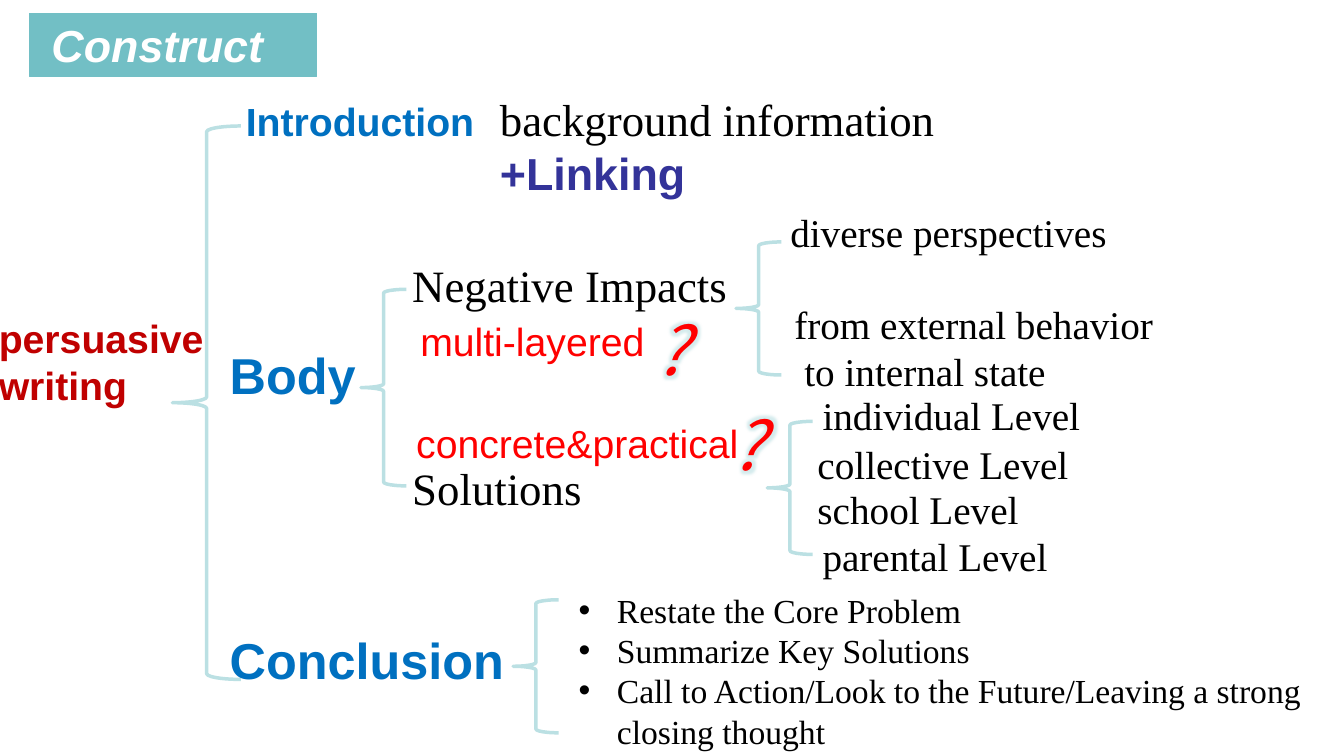
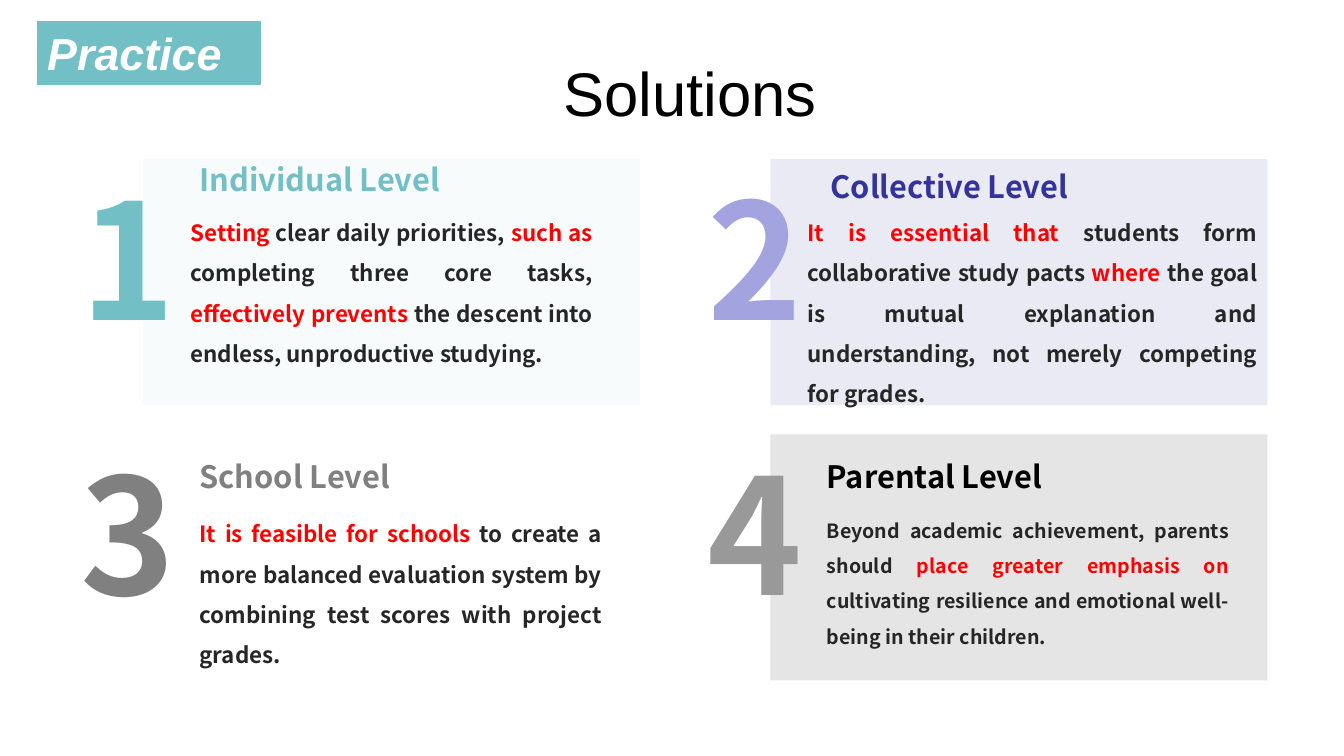
from lxml import etree
from pptx import Presentation, util as u
from pptx.dml.color import RGBColor
from pptx.enum import shapes, text
from pptx.oxml.ns import qn

HUES = {
    "teal": "72BFC5", "pale": "BBE0E3", "blue": "0070C0", "navy": "333399",
    "lilac": "A3A3E0", "brick": "C00000", "red": "FF0000", "ink": "262626",
    "gray": "808080", "ash": "999999", "black": "000000", "white": "FFFFFF",
}
SANS, SERIF = "Arial", "Times New Roman"
NOTO, MARK = "Noto Sans CJK SC", "Noto Sans CJK JP"
KIND = shapes.MSO_SHAPE
ALIGN = text.PP_ALIGN


def hue(name):
    return RGBColor.from_string(HUES[name])


def inch(*sizes):
    return [u.Inches(size) for size in sizes]


def node(parent, tag, **attrs):
    item = etree.SubElement(parent, qn(tag))
    for key, value in attrs.items():
        item.set(key, str(value))
    return item


# Text
def style(run, size=28, font=SANS, color="black", bold=False, italic=False,
          fade=None, glow=None):
    face = run.font
    if fade:
        face.fill.gradient()
        face.fill.gradient_angle = 315
        for stop, name, place in zip(face.fill.gradient_stops, (color, fade), (0, 0.72)):
            stop.color.rgb = hue(name)
            stop.position = place
    else:
        face.color.rgb = hue(color)
    if glow:
        halo = node(node(run._r.get_or_add_rPr(), "a:effectLst"), "a:glow",
                    rad=u.Pt(8))
        tint = node(halo, "a:srgbClr", val=HUES[glow])
        node(tint, "a:alpha", val=60000)
    face.size, face.name = u.Pt(size), font
    face.bold, face.italic = bold, italic


def write(frame, paras, align=ALIGN.LEFT, space=None, bullet=False, **fmt):
    """Each paragraph is a string or a list of (string, run format) pairs."""
    if isinstance(paras, str):
        paras = [paras]
    for i, runs in enumerate(paras):
        para = frame.paragraphs[0] if i == 0 else frame.add_paragraph()
        para.alignment = align
        if space:
            para.line_spacing = space
        if bullet:
            props = para._p.get_or_add_pPr()
            props.set("marL", str(u.Inches(0.38)))
            props.set("indent", str(u.Inches(-0.38)))
            node(props, "a:buFont", typeface=SANS)
            node(props, "a:buChar", char="•")
        for words, extra in [(runs, {})] if isinstance(runs, str) else runs:
            run = para.add_run()
            run.text = words
            style(run, **{**fmt, **extra})


def label(slide, at, paras, middle=False, flush=False, wrap=True, **fmt):
    frame = slide.shapes.add_textbox(*inch(*at)).text_frame
    frame.word_wrap = wrap
    if middle:
        frame.vertical_anchor = text.MSO_ANCHOR.MIDDLE
    if flush:
        frame.margin_left = frame.margin_right = 0
        frame.margin_top = frame.margin_bottom = 0
    write(frame, paras, **fmt)
    return frame


# Shapes
def shape(slide, kind, at, fill=None, line=None, width=0.75):
    item = slide.shapes.add_shape(kind, *inch(*at))
    item.shadow.inherit = False
    if fill:
        item.fill.solid()
        item.fill.fore_color.rgb = hue(fill)
    else:
        item.fill.background()
    if line:
        item.line.color.rgb = hue(line)
        item.line.width = u.Pt(width)
    else:
        item.line.fill.background()
    return item


def banner(slide, at, words, inset=0.1):
    frame = shape(slide, KIND.RECTANGLE, at, "teal", "teal").text_frame
    frame.margin_left = u.Inches(inset)
    frame.vertical_anchor = text.MSO_ANCHOR.TOP
    write(frame, words, size=32, color="white", bold=True, italic=True)


def brace(slide, *at):
    shape(slide, KIND.LEFT_BRACE, at, line="pale", width=2.5)


def card(slide, x, y, tint, num, shade, head, drop, name, body, words):
    # Panel
    panel = shape(slide, KIND.ROUNDED_RECTANGLE, (x, y, 4.93, 2.44), tint)
    panel.adjustments[0] = 0
    solid = panel.fill._xPr.find(qn("a:solidFill"))
    node(solid[0], "a:alpha", val=10000)
    # Body, heading and number
    left, top, width, size = body
    label(slide, (x + left, y + top, width, 1.52), [words], flush=True,
          align=ALIGN.JUSTIFY, space=1.5, size=size, font=NOTO,
          color="ink", bold=True)
    label(slide, (x + drop[0], y + drop[1], 3.99, 0.62), name, middle=True,
          flush=True, size=22, font=NOTO, color=head, bold=True)
    label(slide, (x - 0.66, y, 1.01, 1.8), num, flush=True, wrap=False,
          align=ALIGN.CENTER, size=115, font=NOTO, bold=True, **shade)


# Slides
def outline(slide):
    banner(slide, (0.29, 0.13, 2.85, 0.63), "Construct", inset=0.22)

    # Trunk
    label(slide, (-0.11, 3.07, 2.57, 1.11), ["persuasive", "writing"],
          color="brick", bold=True)
    brace(slide, 1.71, 1.25, 0.68, 5.49)
    for at, words, size in [
        ((2.34, 0.92, 2.79, 0.6), "Introduction", 28),
        ((2.18, 3.36, 1.6, 0.59), "Body", 36),
        ((2.18, 6.19, 3.04, 0.58), "Conclusion", 36),
    ]:
        label(slide, at, words, size=size, color="blue", bold=True)

    # Introduction
    label(slide, (4.86, 0.86, 7.99, 1.18),
          ["background information",
           [("+Linking", dict(font=SANS, color="navy", bold=True))]],
          size=32, font=SERIF)

    # Body
    brace(slide, 3.58, 2.87, 0.45, 1.95)
    for at, words in [
        ((3.99, 2.51, 3.46, 0.56), "Negative Impacts"),
        ((3.99, 4.52, 5.56, 0.37), "Solutions"),
    ]:
        label(slide, at, words, size=32, font=SERIF)
    for at, words in [
        ((4.07, 3.1, 2.44, 0.57), "multi-layered"),
        ((4.03, 4.11, 6.67, 0.57), "concrete&practical"),
    ]:
        label(slide, at, words, color="red")
    for x, y in [(6.4, 3.01), (7.16, 3.95)]:
        label(slide, (x, y, 0.72, 0.91), "?", size=48, font=MARK,
              color="red", italic=True, glow="pale")

    # Leaves
    for x, y in [(7.3, 2.4), (7.61, 4.18), (5.09, 5.95)]:
        brace(slide, x, y, 0.45, 1.32)
    for x, y, words in [
        (7.74, 2.02, "diverse perspectives"),
        (8.06, 3.83, "individual Level"),
        (8.01, 4.32, "collective Level"),
        (8.01, 4.77, "school Level"),
        (8.06, 5.23, "parental Level"),
    ]:
        label(slide, (x, y, 5.56, 0.36), words, font=SERIF)
    frame = label(slide, (7.78, 2.93, 5.56, 0.64),
                  ["from external behavior", "to internal state"], font=SERIF)
    frame.paragraphs[1]._p.get_or_add_pPr().set("marL", str(u.Inches(0.1)))

    # Conclusion
    label(slide, (5.64, 5.8, 7.72, 1.51),
          ["Restate the Core Problem", "Summarize Key Solutions",
           "Call to Action/Look to the Future/Leaving a strong closing thought"],
          bullet=True, size=24, font=SERIF)


def levels(slide):
    label(slide, (5.49, 0.29, 3.04, 1.25), "Solutions", middle=True, size=44)
    banner(slide, (0.37, 0.21, 2.21, 0.63), "Practice")

    red = dict(color="red")
    cards = [
        ("pale", "1", dict(color="teal"), "teal", (0.56, -0.11),
         "Individual Level", (0.47, 0.46, 3.99, 16),
         [("Setting", red), (" clear daily priorities, ", {}), ("such as", red),
          (" completing three core tasks, ", {}), ("effectively prevents", red),
          (" the descent into endless, unproductive studying.", {})]),
        ("navy", "2", dict(color="lilac", fade="navy"), "navy", (0.6, -0.04),
         "Collective Level", (0.37, 0.46, 4.46, 16),
         [("It is essential that", red),
          (" students form collaborative study pacts ", {}), ("where ", red),
          ("the goal is mutual explanation and understanding, "
           "not merely competing for grades.", {})]),
        ("white", "3", dict(color="gray"), "gray", (0.56, 0.1),
         "School Level", (0.56, 0.72, 3.99, 16),
         [("It is feasible for schools ", red),
          ("to create a more balanced evaluation system by "
           "combining test scores with project grades.", {})]),
        ("black", "4", dict(color="ash", fade="black"), "black", (0.56, 0.1),
         "Parental Level", (0.56, 0.72, 3.99, 14),
         [("Beyond academic achievement, parents should ", {}),
          ("place greater emphasis on ", red),
          ("cultivating resilience and emotional well-being "
           "in their children.", {})]),
    ]
    for i, (tint, num, shade, head, drop, name, body, words) in enumerate(cards):
        row, col = divmod(i, 2)
        card(slide, 1.42 + 6.22 * col, 1.58 + 2.73 * row, tint, num, shade,
             head, drop, name, body, words)


def main():
    deck = Presentation()
    deck.slide_width, deck.slide_height = inch(13.33, 7.5)
    for build in (outline, levels):
        build(deck.slides.add_slide(deck.slide_layouts[6]))
    deck.save("out.pptx")


if __name__ == "__main__":
    main()
